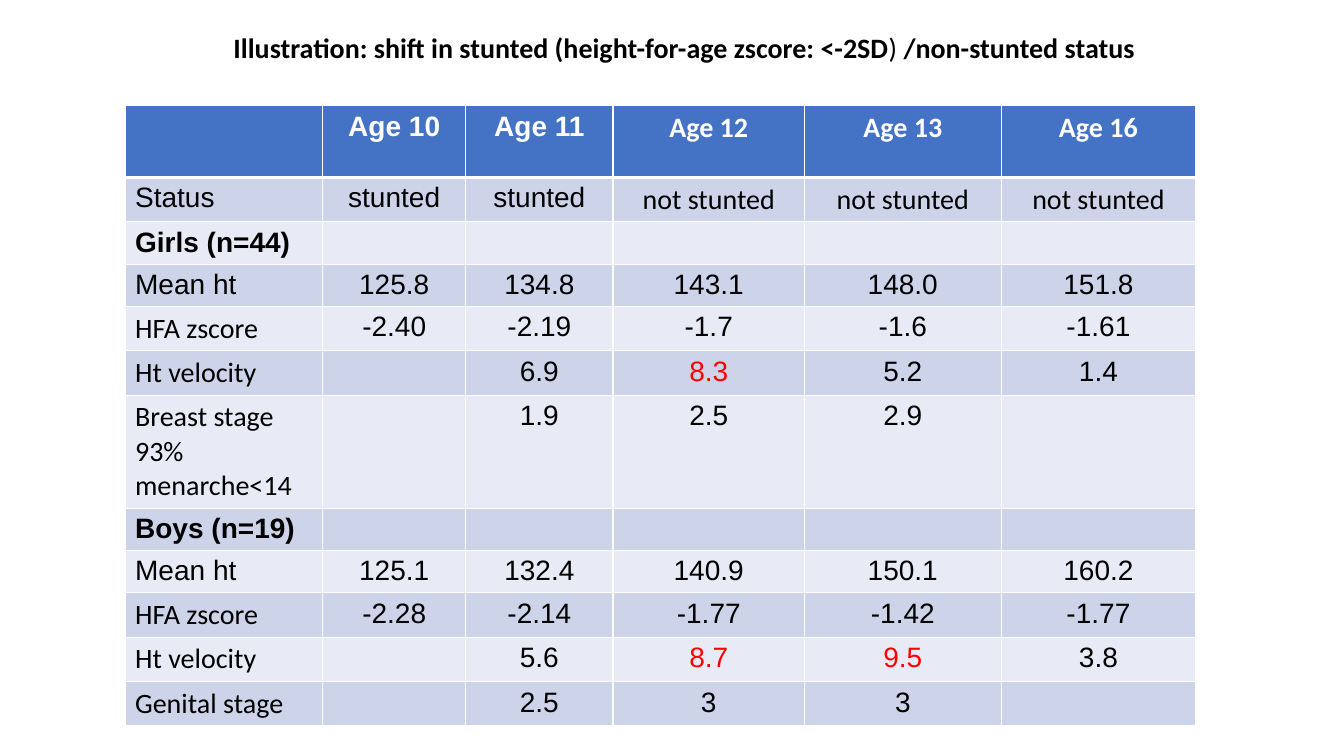
from lxml import etree
from pptx import Presentation
from pptx import util as u
from pptx.dml.color import RGBColor
from pptx.enum import text as t
from pptx.oxml.ns import qn

PX = 9144  # 100 px to the inch

COLS = [196, 142, 146, 190, 195, 193]
HEAD, ROW = 71, 42
ROWS = [
    ["", "Age 10", "Age 11", "Age 12", "Age 13", "Age 16"],
    ["Status", "stunted", "stunted"] + ["not stunted"] * 3,
    ["Girls (n=44)", "", "", "", "", ""],
    ["Mean ht", "125.8", "134.8", "143.1", "148.0", "151.8"],
    ["HFA zscore", "-2.40", "-2.19", "-1.7", "-1.6", "-1.61"],
    ["Ht velocity", "", "6.9", "8.3", "5.2", "1.4"],
    ["Breast stage\n93% menarche<14", "", "1.9", "2.5", "2.9", ""],
    ["Boys (n=19)", "", "", "", "", ""],
    ["Mean ht", "125.1", "132.4", "140.9", "150.1", "160.2"],
    ["HFA zscore", "-2.28", "-2.14", "-1.77", "-1.42", "-1.77"],
    ["Ht velocity", "", "5.6", "8.7", "9.5", "3.8"],
    ["Genital stage", "", "2.5", "3", "3", ""],
]
CALIBRI = {"Age 12", "Age 13", "Age 16", "not stunted", "HFA zscore",
           "Ht velocity", "Breast stage\n93% menarche<14", "Genital stage"}
PEAKS = {"8.3", "8.7", "9.5"}
GROUPS = {"Girls (n=44)", "Boys (n=19)"}


def px(*vals):
    return [u.Emu(v * PX) for v in vals]


def paint(target, color):
    """Set a solid fill or a font colour from a hex string."""
    if hasattr(target, "solid"):
        target.solid()
        target = target.fore_color
    else:
        target = target.color
    target.rgb = RGBColor.from_string(color)


def write(para, words, font="Calibri", size=20, color="000000", bold=False,
          align=t.PP_ALIGN.LEFT):
    para.alignment = align
    run = para.add_run()
    run.text = words
    run.font.name, run.font.size, run.font.bold = font, u.Pt(size), bold
    paint(run.font, color)


def edge(cell, side, width):
    line = etree.SubElement(cell._tc.get_or_add_tcPr(), qn("a:ln" + side),
                            w=str(u.Pt(width)))
    fill = etree.SubElement(line, qn("a:solidFill"))
    etree.SubElement(fill, qn("a:srgbClr"), val="FFFFFF")


def heading(slide, box):
    title = slide.shapes.title
    title.left, title.top, title.width, title.height = px(*box)
    frame = title.text_frame
    frame.word_wrap = True
    frame.auto_size = t.MSO_AUTO_SIZE.NONE
    frame.vertical_anchor = t.MSO_ANCHOR.TOP
    parts = [("Illustration: shift in stunted (height-for-age zscore: <-2SD", True),
             (") ", False), ("/non-stunted status", True)]
    for words, bold in parts:
        write(frame.paragraphs[0], words, bold=bold, align=t.PP_ALIGN.CENTER)


def fill_cell(cell, words, row, col):
    # White borders, thicker under the header
    for side in "LRTB":
        thick = (row, side) in ((0, "B"), (1, "T"))
        edge(cell, side, 3 if thick else 1)
    paint(cell.fill, "4472C4" if row == 0 else ("E8EBF5", "CDD4EA")[row % 2])
    if not words:
        return
    color = "FFFFFF" if row == 0 else "FF0000" if words in PEAKS else "000000"
    frame = cell.text_frame
    for n, line in enumerate(words.split("\n")):
        para = frame.add_paragraph() if n else frame.paragraphs[0]
        write(para, line, font="Calibri" if words in CALIBRI else "Arial",
              color=color, bold=row == 0 or words in GROUPS,
              align=t.PP_ALIGN.CENTER if col else t.PP_ALIGN.LEFT)


def growth(slide, left, top):
    high = HEAD + ROW * (len(ROWS) - 1)
    table = slide.shapes.add_table(len(ROWS), len(COLS),
                                   *px(left, top, sum(COLS), high)).table
    for col, wide in zip(table.columns, COLS):
        col.width = px(wide)[0]
    for r, words in enumerate(ROWS):
        table.rows[r].height = px(ROW if r else HEAD)[0]
        for c, word in enumerate(words):
            fill_cell(table.cell(r, c), word, r, c)


def main():
    deck = Presentation()
    deck.slide_width, deck.slide_height = px(1333, 750)
    slide = deck.slides.add_slide(deck.slide_layouts[5])
    heading(slide, (12, 25, 1333, 125))
    growth(slide, 124, 105)
    deck.save("out.pptx")


if __name__ == "__main__":
    main()
